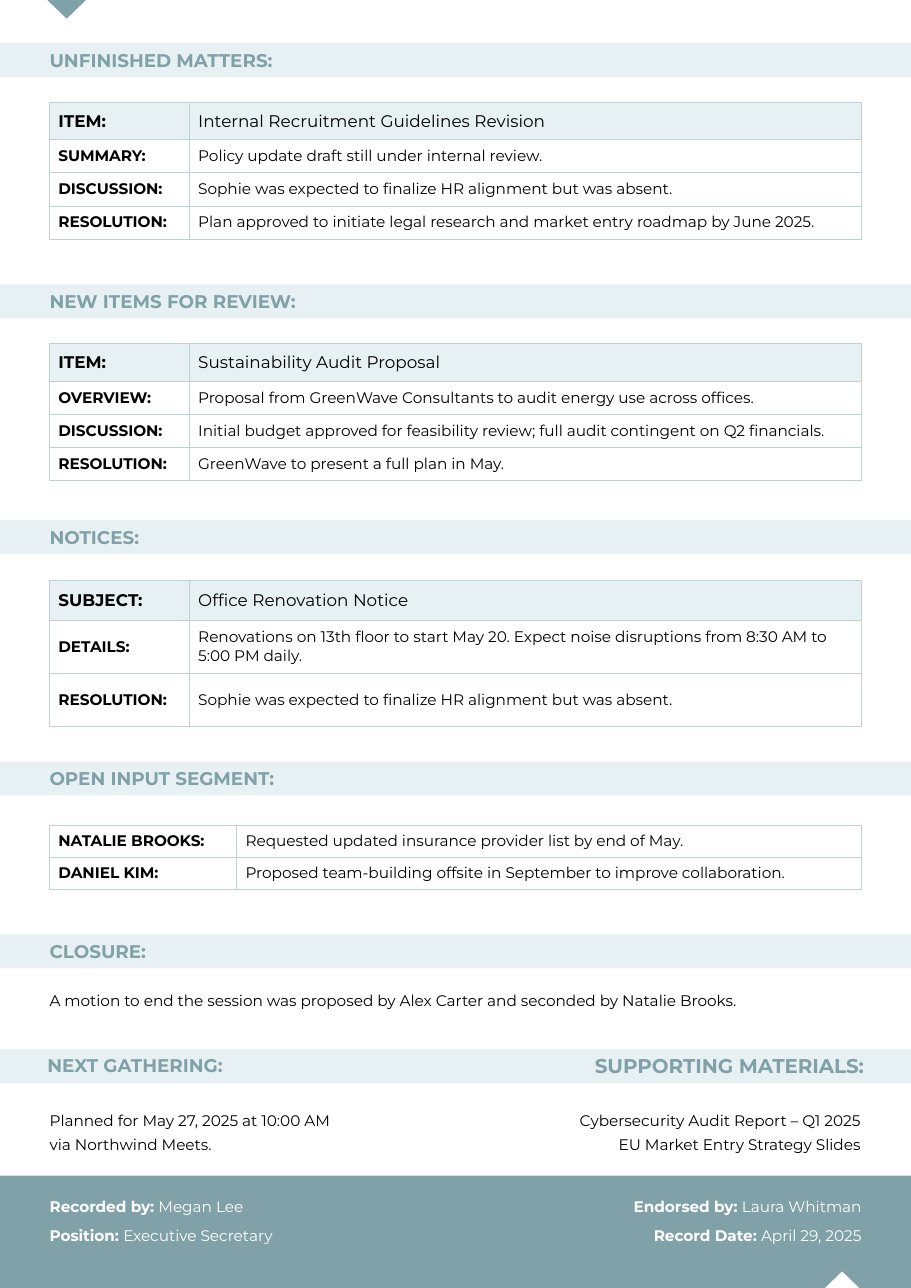
from lxml.etree import SubElement
from pptx import Presentation
from pptx.dml.color import RGBColor
from pptx.enum.shapes import MSO_SHAPE
from pptx.enum.text import MSO_ANCHOR, PP_ALIGN
from pptx.oxml.ns import qn
from pptx.util import Inches, Pt

TEAL = RGBColor(0x80, 0xA1, 0xA8)
PALE = RGBColor(0xE7, 0xF0, 0xF2)
RULE = RGBColor(0xBE, 0xD1, 0xD3)
WHITE = RGBColor(0xFF, 0xFF, 0xFF)
BLACK = RGBColor(0, 0, 0)
FONT = "Montserrat"
PAGE_W, PAGE_H = 8.27, 11.69
MARGIN = 0.45
BODY_W = 7.37
BAND_H = 0.31


def style(para, size, color, bold=None, align=PP_ALIGN.LEFT):
    """Set the font and alignment of a paragraph."""
    para.alignment = align
    font = para.font
    font.name, font.size, font.bold = FONT, Pt(size), bold
    font.color.rgb = color


def pad(frame, left=0, top=0, right=0, bottom=0):
    """Set the margins of a text frame or table cell in inches."""
    frame.margin_left, frame.margin_top = Inches(left), Inches(top)
    frame.margin_right, frame.margin_bottom = Inches(right), Inches(bottom)


def block(slide, kind, left, top, width, height, color):
    """Add a plain filled shape."""
    shape = slide.shapes.add_shape(
        kind, Inches(left), Inches(top), Inches(width), Inches(height))
    shape.shadow.inherit = False
    shape.fill.solid()
    shape.fill.fore_color.rgb = color
    shape.line.fill.background()
    return shape


def band(slide, top, title):
    """Add a full-width section heading."""
    frame = block(slide, MSO_SHAPE.RECTANGLE, 0, top, PAGE_W, BAND_H, PALE).text_frame
    pad(frame, MARGIN, 0.1, 0.1, 0.1)
    frame.vertical_anchor = MSO_ANCHOR.MIDDLE
    para = frame.paragraphs[0]
    para.text = title
    style(para, 12, TEAL, True)


def edge(cell, color):
    """Draw the four borders of a cell, or none without a colour."""
    props = cell._tc.get_or_add_tcPr()
    for side in ("a:lnL", "a:lnR", "a:lnT", "a:lnB"):
        line = SubElement(props, qn(side), w=str(Pt(0.75)))
        if color is None:
            SubElement(line, qn("a:noFill"))
        else:
            fill = SubElement(line, qn("a:solidFill"))
            SubElement(fill, qn("a:srgbClr"), val=str(color))


def table(slide, left, top, cols, heights):
    """Add a table without style effects and return it."""
    grid = slide.shapes.add_table(
        len(heights), len(cols), Inches(left), Inches(top),
        Inches(sum(cols)), Inches(sum(heights))).table
    grid.first_row = grid.horz_banding = False
    for col, width in zip(grid.columns, cols):
        col.width = Inches(width)
    for row, height in zip(grid.rows, heights):
        row.height = Inches(height)
    return grid


def fill_cell(cell, text, back, border):
    """Write a cell with its fill and borders and return its paragraph."""
    edge(cell, border)
    if back is None:
        cell.fill.background()
    else:
        cell.fill.solid()
        cell.fill.fore_color.rgb = back
    cell.vertical_anchor = MSO_ANCHOR.MIDDLE
    cell.text = text
    return cell.text_frame.paragraphs[0]


def record(slide, top, label_w, heights, rows, head=True):
    """Add a table of bold labels and their details."""
    grid = table(slide, MARGIN, top, (label_w, BODY_W - label_w), heights)
    for r, row in enumerate(rows):
        first = head and r == 0
        for c, text in enumerate(row):
            cell = grid.cell(r, c)
            pad(cell, 0.08)
            para = fill_cell(cell, text, PALE if first else None, RULE)
            style(para, 11 if first else 10, BLACK, c == 0)


def split_band(slide, top):
    """Add the two-part heading above the closing notes."""
    grid = table(slide, 0, top, (PAGE_W / 2, PAGE_W / 2), (BAND_H,))
    parts = (("NEXT GATHERING:", 12, PP_ALIGN.LEFT, (0.43, 0, 0)),
             ("SUPPORTING MATERIALS:", 13, PP_ALIGN.RIGHT, (0, 0, 0.43)))
    for c, (text, size, align, gaps) in enumerate(parts):
        cell = grid.cell(0, c)
        pad(cell, *gaps)
        style(fill_cell(cell, text, PALE, None), size, TEAL, True, align)


def note(slide, left, top, width, lines, align=PP_ALIGN.LEFT, space=1.3):
    """Add lines of body text."""
    box = slide.shapes.add_textbox(
        Inches(left), Inches(top), Inches(width), Inches(0.2 * len(lines)))
    frame = box.text_frame
    frame.word_wrap = True
    pad(frame)
    for i, line in enumerate(lines):
        para = frame.add_paragraph() if i else frame.paragraphs[0]
        para.text = line
        para.line_spacing = space
        style(para, 10, BLACK, align=align)


def sign(slide, left, top, width, pairs, align):
    """Add a column of signature lines with bold labels."""
    for i, (label, value) in enumerate(pairs):
        box = slide.shapes.add_textbox(
            Inches(left), Inches(top + 0.26 * i), Inches(width), Inches(0.17))
        frame = box.text_frame
        frame.word_wrap = True
        pad(frame)
        para = frame.paragraphs[0]
        style(para, 10, WHITE, align=align)
        for text, bold in ((label + " ", True), (value, False)):
            run = para.add_run()
            run.text = text
            run.font.bold = bold


def footer(slide, top):
    """Add the footer panel with its signatures and corner mark."""
    block(slide, MSO_SHAPE.RECTANGLE, 0, top, PAGE_W, PAGE_H - top, TEAL)
    block(slide, MSO_SHAPE.ISOSCELES_TRIANGLE, 7.48, top + 0.87, 0.33, 0.16, WHITE)
    sign(slide, MARGIN, top + 0.2, 2.39,
         (("Recorded by:", "Megan Lee"), ("Position:", "Executive Secretary")),
         PP_ALIGN.LEFT)
    sign(slide, 5.43, top + 0.2, 2.39,
         (("Endorsed by:", "Laura Whitman"), ("Record Date:", "April 29, 2025")),
         PP_ALIGN.RIGHT)


def minutes(slide):
    """Lay out the whole page of minutes."""
    mark = block(slide, MSO_SHAPE.ISOSCELES_TRIANGLE, 0.43, 0, 0.35, 0.17, TEAL)
    mark.rotation = 180
    for top, title in ((0.39, "UNFINISHED MATTERS:"), (2.58, "NEW ITEMS FOR REVIEW:"),
                       (4.72, "NOTICES:"), (6.91, "OPEN INPUT SEGMENT:"),
                       (8.48, "CLOSURE:")):
        band(slide, top, title)
    absent = "Sophie was expected to finalize HR alignment but was absent."
    item = (0.34, 0.3, 0.3, 0.3)
    record(slide, 0.93, 1.27, item, (
        ("ITEM:", "Internal Recruitment Guidelines Revision"),
        ("SUMMARY:", "Policy update draft still under internal review."),
        ("DISCUSSION:", absent),
        ("RESOLUTION:", "Plan approved to initiate legal research and market entry roadmap by June 2025.")))
    record(slide, 3.12, 1.27, item, (
        ("ITEM:", "Sustainability Audit Proposal"),
        ("OVERVIEW:", "Proposal from GreenWave Consultants to audit energy use across offices."),
        ("DISCUSSION:", "Initial budget approved for feasibility review; full audit contingent on Q2 financials."),
        ("RESOLUTION:", "GreenWave to present a full plan in May.")))
    record(slide, 5.27, 1.27, (0.36, 0.48, 0.48), (
        ("SUBJECT:", "Office Renovation Notice"),
        ("DETAILS:", "Renovations on 13th floor to start May 20. Expect noise disruptions from 8:30 AM to 5:00 PM daily."),
        ("RESOLUTION:", absent)))
    record(slide, 7.49, 1.7, (0.29, 0.29), (
        ("NATALIE BROOKS:", "Requested updated insurance provider list by end of May."),
        ("DANIEL KIM:", "Proposed team-building offsite in September to improve collaboration.")), False)
    note(slide, MARGIN, 9, BODY_W, (
        "A motion to end the session was proposed by Alex Carter and seconded by Natalie Brooks.",), space=1)
    split_band(slide, 9.52)
    note(slide, MARGIN, 10.04, 3.68,
         ("Planned for May 27, 2025 at 10:00 AM", "via Northwind Meets."))
    note(slide, 4.13, 10.04, 3.68,
         ("Cybersecurity Audit Report – Q1 2025", "EU Market Entry Strategy Slides"), PP_ALIGN.RIGHT)
    footer(slide, 10.67)


def main():
    """Build and save the page."""
    deck = Presentation()
    deck.slide_width, deck.slide_height = Inches(PAGE_W), Inches(PAGE_H)
    minutes(deck.slides.add_slide(deck.slide_layouts[6]))
    deck.save("out.pptx")


if __name__ == "__main__":
    main()
